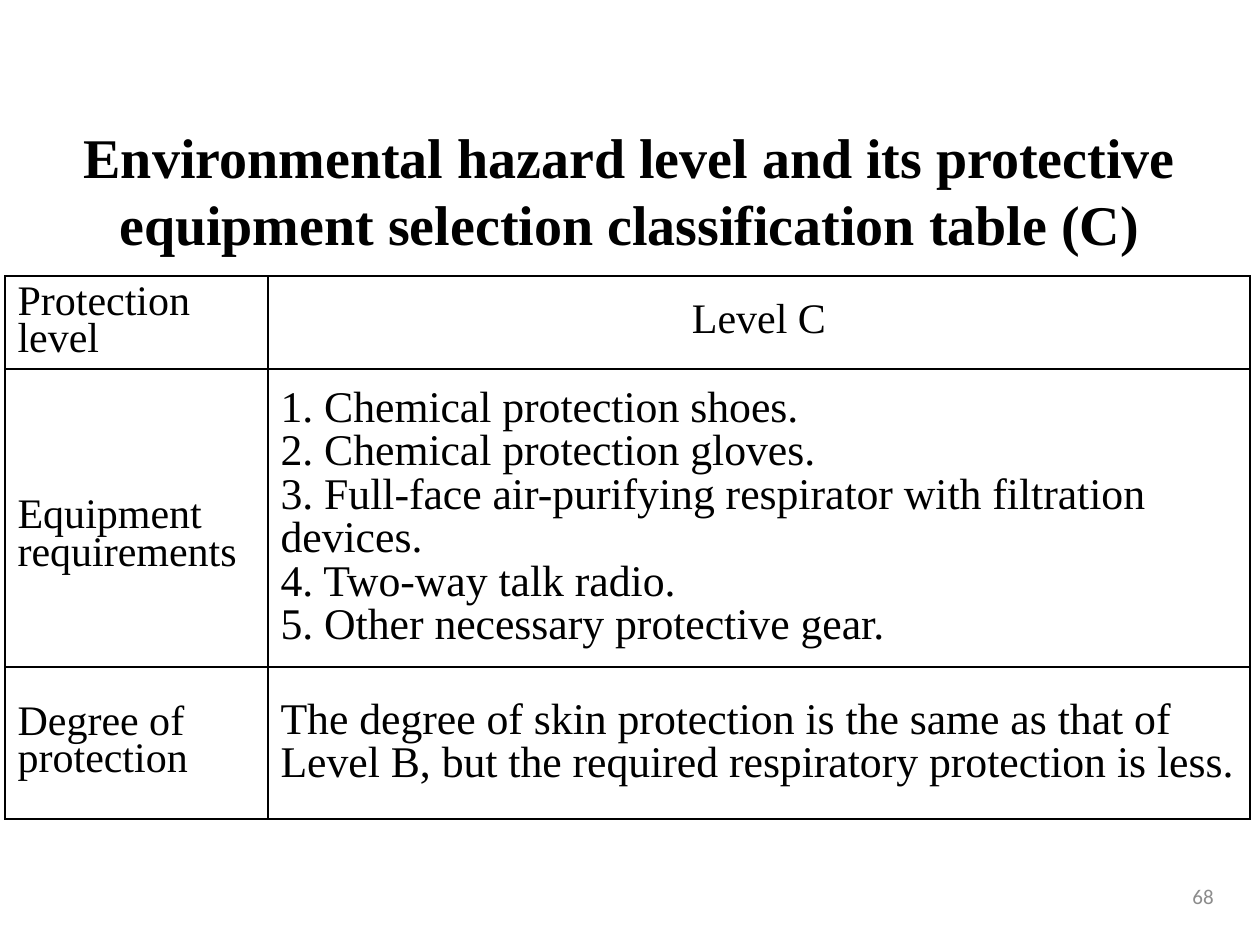
from dataclasses import dataclass

from lxml.etree import SubElement
from pptx import Presentation
from pptx.dml.color import RGBColor
from pptx.enum.text import MSO_ANCHOR, MSO_AUTO_SIZE, PP_ALIGN
from pptx.oxml import parse_xml
from pptx.oxml.ns import nsdecls, qn
from pptx.util import Pt

EMU_PER_PX = 914400 / 126


def px(length):
    return round(length * EMU_PER_PX)


@dataclass(frozen=True)
class Theme:
    ink: str = "000000"
    paper: str = "FFFFFF"
    muted: str = "8C8C8C"
    serif: str = "Times New Roman"
    sans: str = "Calibri"
    title_size: int = 32
    label_size: int = 24
    body_size: int = 25
    number_size: int = 12
    border_width: int = 1


class SlideBuilder:
    def __init__(self, slide, theme):
        self.slide = slide
        self.theme = theme

    def format(self, paragraph, size, color, face, bold=False, align=PP_ALIGN.LEFT):
        paragraph.alignment = align
        font = paragraph.font
        font.size = Pt(size)
        font.name = face
        font.bold = bold
        font.color.rgb = RGBColor.from_string(color)

    def place(self, shape, left, top, width, height):
        shape.left, shape.top = px(left), px(top)
        shape.width, shape.height = px(width), px(height)

    def title(self, text, *box):
        heading = self.slide.shapes.title
        self.place(heading, *box)
        frame = heading.text_frame
        frame.text = text
        frame.word_wrap = True
        frame.auto_size = MSO_AUTO_SIZE.NONE
        frame.vertical_anchor = MSO_ANCHOR.BOTTOM
        self.format(frame.paragraphs[0], self.theme.title_size, self.theme.ink,
                    self.theme.serif, True, PP_ALIGN.CENTER)

    def page_number(self, text, *box):
        frame = self.slide.shapes.add_textbox(*map(px, box)).text_frame
        frame.text = text
        frame.word_wrap = True
        frame.vertical_anchor = MSO_ANCHOR.MIDDLE
        self.format(frame.paragraphs[0], self.theme.number_size, self.theme.muted,
                    self.theme.sans, align=PP_ALIGN.RIGHT)

    def table(self, left, top, column_widths, row_heights):
        size = sum(column_widths), sum(row_heights)
        grid = self.slide.shapes.add_table(
            len(row_heights), len(column_widths), *map(px, (left, top, *size))).table
        grid.first_row = grid.horz_banding = False
        for column, width in zip(grid.columns, column_widths):
            column.width = px(width)
        for row, height in zip(grid.rows, row_heights):
            row.height = px(height)
        return grid

    def borders(self, cell):
        properties = cell._tc.get_or_add_tcPr()
        for position, side in enumerate(("lnL", "lnR", "lnT", "lnB")):
            properties.insert(position, parse_xml(
                f'<a:{side} {nsdecls("a")} w="{Pt(self.theme.border_width)}">'
                f'<a:solidFill><a:srgbClr val="{self.theme.ink}"/></a:solidFill>'
                f'</a:{side}>'))

    def number(self, paragraph):
        properties = paragraph._p.get_or_add_pPr()
        properties.set("marL", "0")
        properties.set("indent", "0")
        SubElement(properties, qn("a:buAutoNum"), type="arabicPeriod")

    def cell(self, cell, lines, size, spacing, align=PP_ALIGN.LEFT, numbered=False):
        cell.fill.solid()
        cell.fill.fore_color.rgb = RGBColor.from_string(self.theme.paper)
        self.borders(cell)
        cell.vertical_anchor = MSO_ANCHOR.MIDDLE
        cell.text_frame.text = "\n".join(lines)
        for paragraph in cell.text_frame.paragraphs:
            if numbered:
                self.number(paragraph)
            paragraph.line_spacing = spacing
            self.format(paragraph, size, self.theme.ink, self.theme.serif, align=align)


def main():
    presentation = Presentation()
    presentation.slide_width, presentation.slide_height = px(1260), px(945)
    theme = Theme()
    builder = SlideBuilder(
        presentation.slides.add_slide(presentation.slide_layouts[5]), theme)

    builder.title("Environmental hazard level and its protective equipment "
                  "selection classification table (C)", 35, 103, 1190, 160)

    levels = builder.table(5, 276, (263, 982), (93, 298, 152))
    labels = "Protection level", "Equipment requirements", "Degree of protection"
    for row, label in enumerate(labels):
        builder.cell(levels.cell(row, 0), [label], theme.label_size, 0.8)
    levels.cell(1, 0).margin_top = px(43)

    equipment = (
        " Chemical protection shoes.",
        " Chemical protection gloves.",
        " Full-face air-purifying respirator with filtration devices.",
        " Two-way talk radio.",
        " Other necessary protective gear.",
    )
    degree = ("The degree of skin protection is the same as that of Level B, "
              "but the required respiratory protection is less.")
    builder.cell(levels.cell(0, 1), ["Level C"], theme.label_size, 0.8, PP_ALIGN.CENTER)
    builder.cell(levels.cell(1, 1), equipment, theme.body_size, 0.9, numbered=True)
    builder.cell(levels.cell(2, 1), [degree], theme.body_size, 0.9)

    builder.page_number("68", 932, 871, 294, 50)
    presentation.save("out.pptx")


if __name__ == "__main__":
    main()
